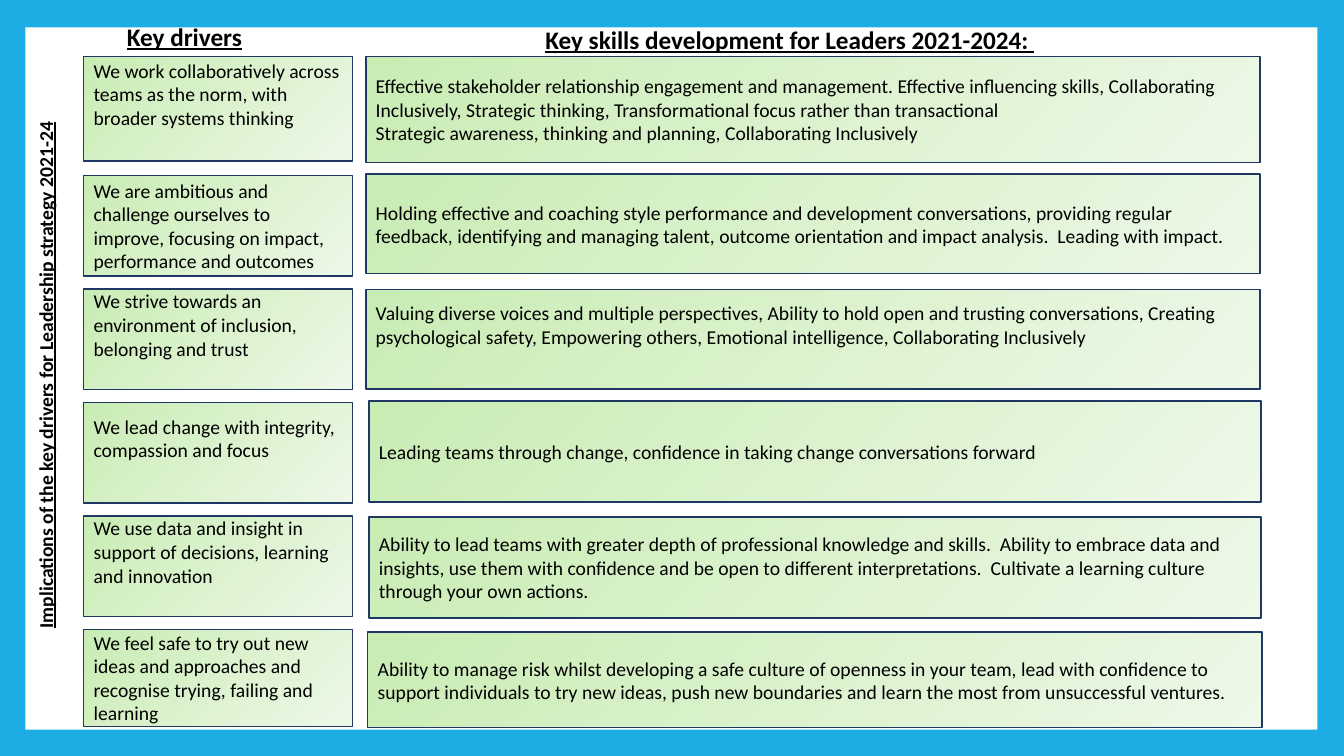
from pptx import Presentation
from pptx import util as u
from pptx.dml import color
from pptx.enum import shapes, text

COLOURS = {
    "frame": "1CADE4",
    "panel": "FFFFFF",
    "box_start": "C9ECB4",
    "box_end": "EDF8E8",
    "outline": "1F3763",
    "text": "000000",
}
BODY = {"name": "Calibri", "size": u.Pt(14)}
SIDE = {**BODY, "bold": True, "underline": True}
HEADING = {**SIDE, "size": u.Pt(18)}

LIFT = u.Cm(0.73)
ROW_PITCH = 2.86
DRIVER_LEFT, DRIVER_WIDTH = 2.11, 6.78

DRIVERS = [
    ("We work collaboratively across teams as the norm, with broader systems thinking", True),
    ("We are ambitious and challenge ourselves to improve, focusing on impact, "
     "performance and outcomes", False),
    ("We strive towards an environment of inclusion, belonging and trust", True),
    ("We lead change with integrity, compassion and focus", True),
    ("We use data and insight in support of decisions, learning and innovation", True),
    ("We feel safe to try out new ideas and approaches and recognise trying, "
     "failing and learning", False),
]
SKILLS = [
    ((9.22, 1.42, 22.53, 2.67), False, [
        "Effective stakeholder relationship engagement and management. Effective influencing "
        "skills, Collaborating Inclusively, Strategic thinking, Transformational focus rather "
        "than transactional",
        "Strategic awareness, thinking and planning, Collaborating Inclusively"]),
    ((9.22, 4.39, 22.53, 2.51), False, [
        "Holding effective and coaching style performance and development conversations, "
        "providing regular feedback, identifying and managing talent, outcome orientation and "
        "impact analysis.  Leading with impact."]),
    ((9.22, 7.29, 22.53, 2.51), True, [
        "Valuing diverse voices and multiple perspectives, Ability to hold open and trusting "
        "conversations, Creating psychological safety, Empowering others, Emotional "
        "intelligence, Collaborating Inclusively"]),
    ((9.3, 10.11, 22.48, 2.54), False, [
        "Leading teams through change, confidence in taking change conversations forward"]),
    ((9.3, 13.03, 22.48, 2.54), False, [
        "Ability to lead teams with greater depth of professional knowledge and skills.  "
        "Ability to embrace data and insights, use them with confidence and be open to "
        "different interpretations.  Cultivate a learning culture through your own actions."]),
    ((9.27, 15.93, 22.53, 2.41), False, [
        "Ability to manage risk whilst developing a safe culture of openness in your team, "
        "lead with confidence to support individuals to try new ideas, push new boundaries "
        "and learn the most from unsuccessful ventures."]),
]


def rgb(name):
    return color.RGBColor.from_string(COLOURS[name])


def apply(target, values):
    for name, value in values.items():
        setattr(target, name, value)


def place(box, area):
    apply(box, dict(zip(("left", "top", "width", "height"), map(u.Cm, area))))


def write(box, paragraphs, font, frame_format, para_format):
    frame = box.text_frame
    apply(frame, frame_format)
    for index, words in enumerate(paragraphs):
        para = frame.add_paragraph() if index else frame.paragraphs[0]
        apply(para, para_format)
        span = para.add_run()
        span.text = words
        apply(span.font, font)
        span.font.color.rgb = rgb("text")


def add_panel(page, area):
    panel = page.shapes.add_shape(shapes.MSO_SHAPE.RECTANGLE, *map(u.Cm, area))
    panel.shadow.inherit = False
    panel.fill.solid()
    panel.fill.fore_color.rgb = rgb("panel")
    panel.line.fill.background()


def add_box(page, area, paragraphs, lifted):
    box = page.shapes.add_shape(shapes.MSO_SHAPE.FLOWCHART_PROCESS, *map(u.Cm, area))
    box.shadow.inherit = False
    box.fill.gradient()
    box.fill.gradient_angle = 315
    for stop, name in zip(box.fill.gradient_stops, ("box_start", "box_end")):
        stop.color.rgb = rgb(name)
    box.line.color.rgb = rgb("outline")
    box.line.width = u.Pt(1)
    frame_format = {"word_wrap": True, "vertical_anchor": text.MSO_ANCHOR.MIDDLE}
    if lifted:
        frame_format["margin_bottom"] = u.Cm(0.13) + LIFT
    write(box, paragraphs, BODY, frame_format, {"alignment": text.PP_ALIGN.LEFT})


def format_heading(box, area, words):
    place(box, area)
    write(box, [words], HEADING,
          {"word_wrap": False, "auto_size": text.MSO_AUTO_SIZE.SHAPE_TO_FIT_TEXT,
           "vertical_anchor": text.MSO_ANCHOR.TOP},
          {"alignment": text.PP_ALIGN.LEFT})


def add_side_label(page, area, words):
    label = page.shapes.add_textbox(*map(u.Cm, area))
    label.rotation = 270
    write(label, [words], SIDE,
          {"word_wrap": True, "vertical_anchor": text.MSO_ANCHOR.MIDDLE,
           "auto_size": text.MSO_AUTO_SIZE.SHAPE_TO_FIT_TEXT},
          {"alignment": text.PP_ALIGN.CENTER, "line_spacing": 1.07, "space_after": u.Pt(8)})


def main():
    deck = Presentation()
    deck.slide_width, deck.slide_height = u.Cm(33.87), u.Cm(19.05)
    page = deck.slides.add_slide(deck.slide_layouts[5])
    page.background.fill.solid()
    page.background.fill.fore_color.rgb = rgb("frame")

    add_panel(page, (0.64, 0.69, 32.56, 17.7))

    heights = [2.64, 2.54, 2.54, 2.54, 2.54, 2.44]
    tops = [1.42] + [4.42 + ROW_PITCH * row for row in range(5)]
    for top, height, (words, lifted) in zip(tops, heights, DRIVERS):
        add_box(page, (DRIVER_LEFT, top, DRIVER_WIDTH, height), [words], lifted)
    for area, lifted, paragraphs in SKILLS:
        add_box(page, area, paragraphs, lifted)

    add_side_label(page, (-5.56, 9.02, 13.36, 0.86),
                   "Implications of the key drivers for Leadership strategy 2021-24")
    title = page.shapes.title
    page.shapes.element.append(title.element)
    format_heading(title, (13.49, 0.48, 12.93, 1.02),
                   "Key skills development for Leaders 2021-2024: ")
    drivers_heading = page.shapes.add_textbox(0, 0, 0, 0)
    format_heading(drivers_heading, (2.95, 0.41, 3.43, 1.02), "Key drivers")

    deck.save("out.pptx")


if __name__ == "__main__":
    main()
